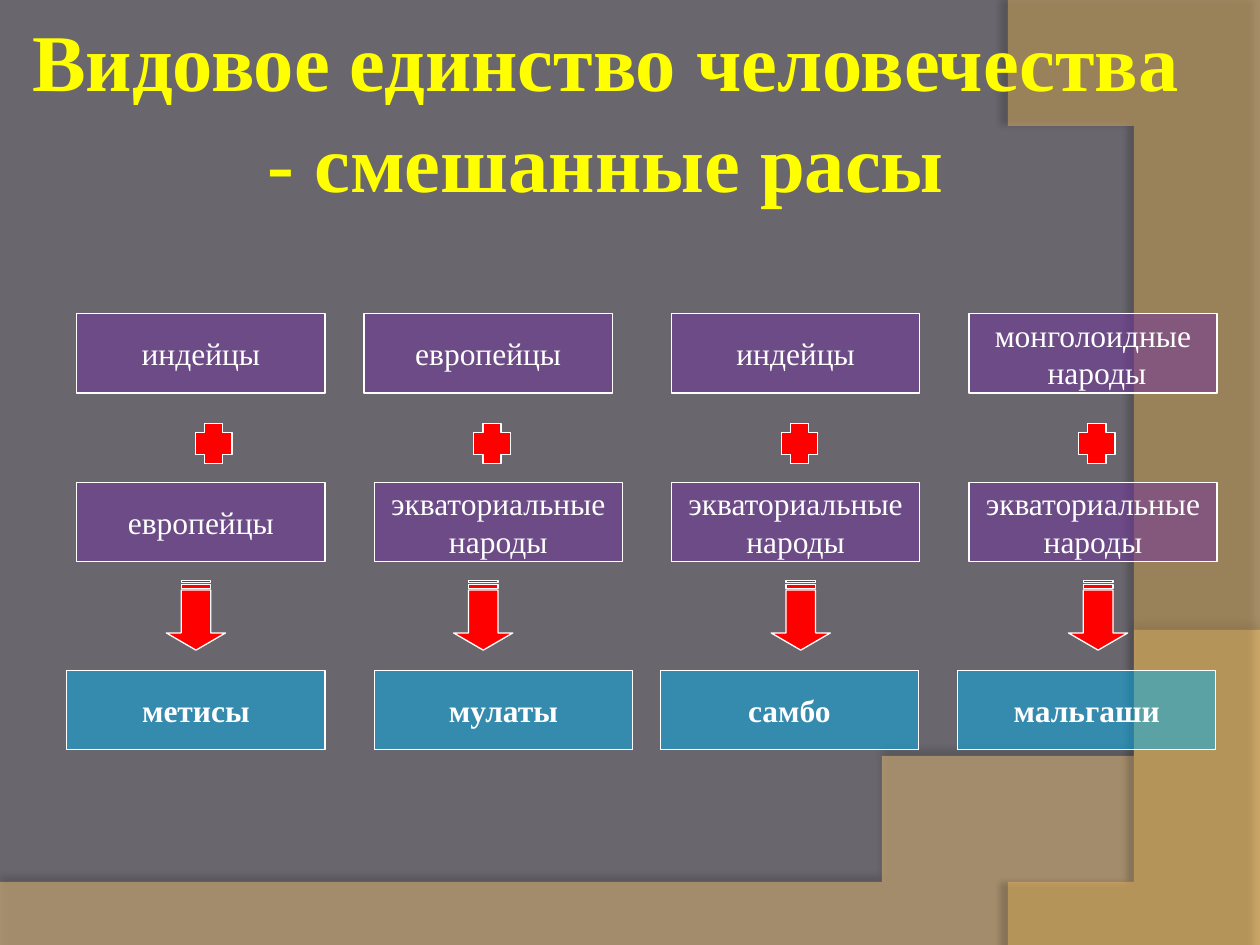
from lxml import etree
from pptx import Presentation
from pptx.dml.color import RGBColor
from pptx.enum.shapes import MSO_SHAPE
from pptx.enum.text import MSO_ANCHOR, PP_ALIGN
from pptx.oxml.ns import qn
from pptx.util import Inches, Pt

RECT, PLUS = MSO_SHAPE.RECTANGLE, MSO_SHAPE.CROSS
ARROW = MSO_SHAPE.STRIPED_RIGHT_ARROW
CENTER = PP_ALIGN.CENTER
TOP, MIDDLE = MSO_ANCHOR.TOP, MSO_ANCHOR.MIDDLE

FONT = "Times New Roman"
WHITE, YELLOW, RED = "FFFFFF", "FFFF00", "FF0000"
PURPLE, BLUE = "7030A0", "00B0F0"

LEFT, COLUMN_STEP, BOX_HEIGHT = 0.61, 2.36, 0.63
EQUATORIAL = "экваториальные\nнароды"

# Parent, parent, mixed race; then each part's shift from its column's left edge:
# first parent, plus, arrow, result
MIXES = [
    ("индейцы", "европейцы", "метисы", 0, 0.94, 0.67, -0.08),
    ("европейцы", EQUATORIAL, "мулаты", -0.08, 0.79, 0.59, 0),
    ("индейцы", EQUATORIAL, "самбо", 0, 0.87, 0.75, -0.09),
    ("монголоидные\n народы", EQUATORIAL, "мальгаши", 0, 0.87, 0.75, -0.09),
]


def color(hex_text):
    return RGBColor.from_string(hex_text)


def paint(shape, fill, alpha=100, line=None):
    shape.shadow.inherit = False
    shape.fill.solid()
    shape.fill.fore_color.rgb = color(fill)
    if alpha < 100:
        tint = shape._element.spPr.find(qn("a:solidFill"))[0]
        etree.SubElement(tint, qn("a:alpha"), val=str(alpha * 1000))
    if line:
        shape.line.color.rgb = color(line)
        shape.line.width = Pt(0.75)
    else:
        shape.line.fill.background()


def cast_shadow(shape, alpha, blur, distance, angle):
    effects = shape._element.spPr.find(qn("a:effectLst"))
    shadow = etree.SubElement(
        effects, qn("a:outerShdw"), blurRad=str(Pt(blur)), dist=str(Pt(distance)),
        dir=str(angle * 60000), algn="ctr", rotWithShape="0")
    tint = etree.SubElement(shadow, qn("a:srgbClr"), val="000000")
    etree.SubElement(tint, qn("a:alpha"), val=str(alpha * 1000))


def write(shape, text, size=18, ink=WHITE, bold=False, wrap=False,
          anchor=MIDDLE, spacing=1.0):
    frame = shape.text_frame
    frame.word_wrap = wrap
    frame.vertical_anchor = anchor
    frame.text = text
    for paragraph in frame.paragraphs:
        paragraph.alignment = CENTER
        paragraph.line_spacing = spacing
        font = paragraph.font
        for run in paragraph.runs:
            font = run.font
            font.name, font.size, font.bold = FONT, Pt(size), bold
            font.color.rgb = color(ink)


def add_part(slide, kind, box, fill, alpha=100):
    part = slide.shapes.add_shape(kind, *map(Inches, box))
    paint(part, fill, alpha, line=WHITE)
    return part


def curve(start, control_a, control_b, end, steps=48):
    """Points along a cubic Bezier curve."""
    points = []
    for step in range(steps + 1):
        t = step / steps
        weights = ((1 - t) ** 3, 3 * t * (1 - t) ** 2, 3 * t * t * (1 - t), t ** 3)
        points.append(tuple(
            sum(weight * value for weight, value in zip(weights, axis))
            for axis in zip(start, control_a, control_b, end)))
    return points


def add_swoosh(slide, points, fill, alpha, shadow):
    builder = slide.shapes.build_freeform(*points[0], scale=Inches(1))
    builder.add_line_segments(points[1:], close=True)
    swoosh = builder.convert_to_shape()
    paint(swoosh, fill, alpha)
    cast_shadow(swoosh, *shadow)


def add_background(slide, width, height):
    slide.background.fill.solid()
    slide.background.fill.fore_color.rgb = color("69676D")
    bottom = [(0, height), (width, height)]
    bottom += curve((width, 5.2), (5.59, 7.29), (3.91, 7.19), (0, 7.05))
    add_swoosh(slide, bottom, "FFCF7F", 45, (35, 4, 3.5, 270))
    right = [(width, 0.02), (width, height)]
    right += curve((8.21, height), (9.35, 6.19), (10.18, 3), (8, 0))
    add_swoosh(slide, right, "FFC75E", 40, (45, 4, 4, 180))


def add_title(slide, box):
    title = slide.shapes.add_textbox(*map(Inches, box))
    write(title, "Видовое единство человечества - смешанные расы", size=46,
          ink=YELLOW, bold=True, wrap=True, anchor=TOP, spacing=1.05)


def add_mix(slide, left, top, mix):
    """One column: parent + parent, arrow, mixed race."""
    first, second, result, first_dx, plus_dx, arrow_dx, result_dx = mix
    for text, dx, dy in ((first, first_dx, 0), (second, 0, 1.34)):
        parent = add_part(slide, RECT, (left + dx, top + dy, 1.97, BOX_HEIGHT),
                          PURPLE, 50)
        write(parent, text)
    race = add_part(slide, RECT, (left + result_dx, top + 2.83, 2.05, BOX_HEIGHT),
                    BLUE, 50)
    write(race, result, bold=True)

    plus = add_part(slide, PLUS, (left + plus_dx, top + 0.87, 0.29, 0.32), RED)
    plus.adjustments[0] = 0.25
    arrow = add_part(slide, ARROW, (left + arrow_dx, top + 2.16, 0.55, 0.47), RED)
    arrow.adjustments[0] = 0.5
    arrow.adjustments[1] = 0.29
    arrow.rotation = 90


def main():
    deck = Presentation()
    deck.slide_width, deck.slide_height = Inches(10), Inches(7.5)
    slide = deck.slides.add_slide(deck.slide_layouts[6])
    add_background(slide, 10, 7.5)
    add_title(slide, (0, 0, 9.61, 1.87))
    for column, mix in enumerate(MIXES):
        add_mix(slide, LEFT + column * COLUMN_STEP, 2.49, mix)
    deck.save("out.pptx")


if __name__ == "__main__":
    main()
